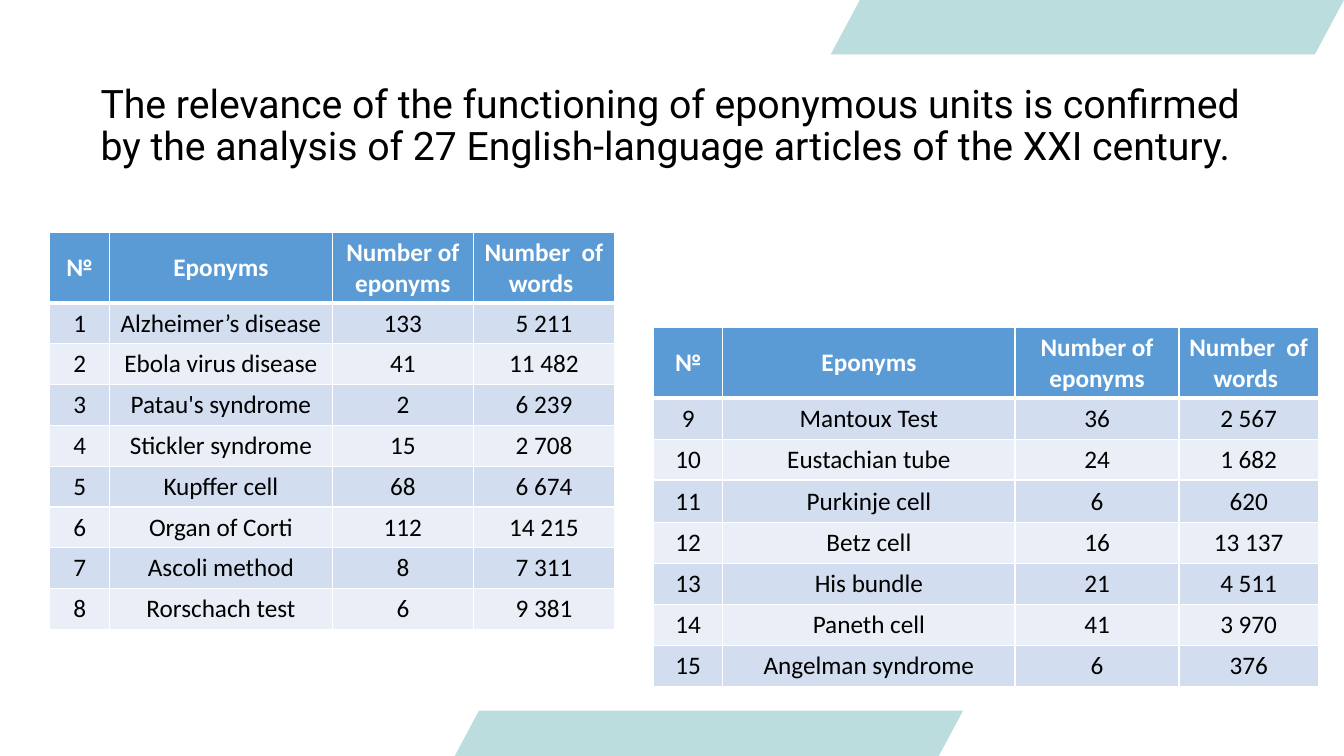
from lxml.etree import SubElement
from pptx import Presentation
from pptx.dml.color import RGBColor
from pptx.enum.shapes import MSO_SHAPE
from pptx.enum.text import MSO_ANCHOR, PP_ALIGN
from pptx.oxml.ns import qn
from pptx.util import Inches, Pt

COLORS = {"teal": "BBDDDE", "white": "FFFFFF", "black": "000000",
          "head": "5B9BD5", "odd": "D2DEEF", "even": "EAEFF7"}
HEADER = ("№", "Eponyms", "Number of eponyms", "Number  of words ")
FIRST_ROWS = [
    ("1", "Alzheimer’s disease", "133", "5 211"),
    ("2", "Ebola virus disease", "41", "11 482"),
    ("3", "Patau's syndrome", "2", "6 239"),
    ("4", "Stickler syndrome", "15", "2 708"),
    ("5", "Kupffer cell", "68", "6 674"),
    ("6", "Organ of Corti", "112", "14 215"),
    ("7", "Ascoli method", "8", "7 311"),
    ("8", "Rorschach test", "6", "9 381"),
]
SECOND_ROWS = [
    ("9", "Mantoux Test", "36", "2 567"),
    ("10", "Eustachian tube", "24", "1 682"),
    ("11", "Purkinje cell", "6", "620"),
    ("12", "Betz cell", "16", "13 137"),
    ("13", "His bundle", "21", "4 511"),
    ("14", "Paneth cell", "41", "3 970"),
    ("15", "Angelman syndrome", "6", "376"),
]


def rgb(name):
    return RGBColor.from_string(COLORS[name])


class Deck:
    """Style and current slide; lengths are in a grid of 100 columns by 100 rows."""

    def __init__(self):
        self.prs = Presentation()
        self.prs.slide_width, self.prs.slide_height = Inches(13.333), Inches(7.5)
        self.s = self.prs.slides.add_slide(self.prs.slide_layouts[6])

    def x(self, cols):
        return round(self.prs.slide_width * cols / 100)

    def y(self, rows):
        return round(self.prs.slide_height * rows / 100)

    def box(self, left, top, width, height):
        return self.x(left), self.y(top), self.x(width), self.y(height)

    def shape(self, kind, grid, fill, adj=None):
        sp = self.s.shapes.add_shape(kind, *self.box(*grid))
        sp.shadow.inherit = False
        sp.fill.solid()
        sp.fill.fore_color.rgb = rgb(fill)
        sp.line.fill.background()
        if adj is not None:
            sp.adjustments[0] = adj

    def run(self, p, text, font, size, color, bold=False):
        r = p.add_run()
        r.text = text
        r.font.name, r.font.size, r.font.bold = font, Pt(size), bold
        r.font.color.rgb = rgb(color)

    def text(self, grid, text, font, size):
        tf = self.s.shapes.add_textbox(*self.box(*grid)).text_frame
        tf.word_wrap = True
        p = tf.paragraphs[0]
        p.line_spacing = 0.9
        self.run(p, text, font, size, "black")

    def borders(self, cell, top, bottom):
        tc_pr = cell._tc.get_or_add_tcPr()
        sides = (("a:lnL", 1), ("a:lnR", 1), ("a:lnT", top), ("a:lnB", bottom))
        for i, (tag, width) in enumerate(sides):
            ln = SubElement(tc_pr, qn(tag), w=str(Pt(width)))
            fill = SubElement(ln, qn("a:solidFill"))
            SubElement(fill, qn("a:srgbClr"), val=COLORS["white"])
            tc_pr.insert(i, ln)

    def table(self, left, top, cols, rows, data, anchor):
        grid = self.box(left, top, sum(cols), sum(rows))
        tbl = self.s.shapes.add_table(len(rows), len(cols), *grid).table
        for col, width in zip(tbl.columns, cols):
            col.width = self.x(width)
        for i, values in enumerate([HEADER, *data]):
            head = i == 0
            tbl.rows[i].height = self.y(rows[i])
            fill = "head" if head else "odd" if i % 2 else "even"
            for cell, value in zip(tbl.rows[i].cells, values):
                cell.fill.solid()
                cell.fill.fore_color.rgb = rgb(fill)
                self.borders(cell, 3 if i == 1 else 1, 3 if head else 1)
                cell.vertical_anchor = MSO_ANCHOR.MIDDLE if head else anchor
                p = cell.text_frame.paragraphs[0]
                p.alignment = PP_ALIGN.CENTER
                self.run(p, value, "Calibri", 18, "white" if head else "black", head)


def main():
    deck = Deck()

    # Background: slanted band with a white panel across it
    deck.shape(MSO_SHAPE.PARALLELOGRAM, (33.83, 0, 66.17, 100), "teal", 0.536)
    deck.shape(MSO_SHAPE.RECTANGLE, (0, 7.2, 100, 86.8), "white")

    # Statement
    deck.text((6.75, 10.53, 86.33, 67.87),
              "The relevance of the functioning of eponymous units is confirmed "
              "by the analysis of 27 English-language articles of the XXI century.",
              "Roboto", 28)

    # Eponym tables
    deck.table(3.7, 30.75, (4.45, 16.58, 10.5, 10.5), [9.33] + [5.4] * 8,
               FIRST_ROWS, MSO_ANCHOR.TOP)
    deck.table(48.63, 43.33, (5.15, 21.75, 12.2, 10.37),
               [9.33] + [5.42] * 2 + [5.65] + [5.42] * 4,
               SECOND_ROWS, MSO_ANCHOR.MIDDLE)

    deck.prs.save("out.pptx")


if __name__ == "__main__":
    main()
